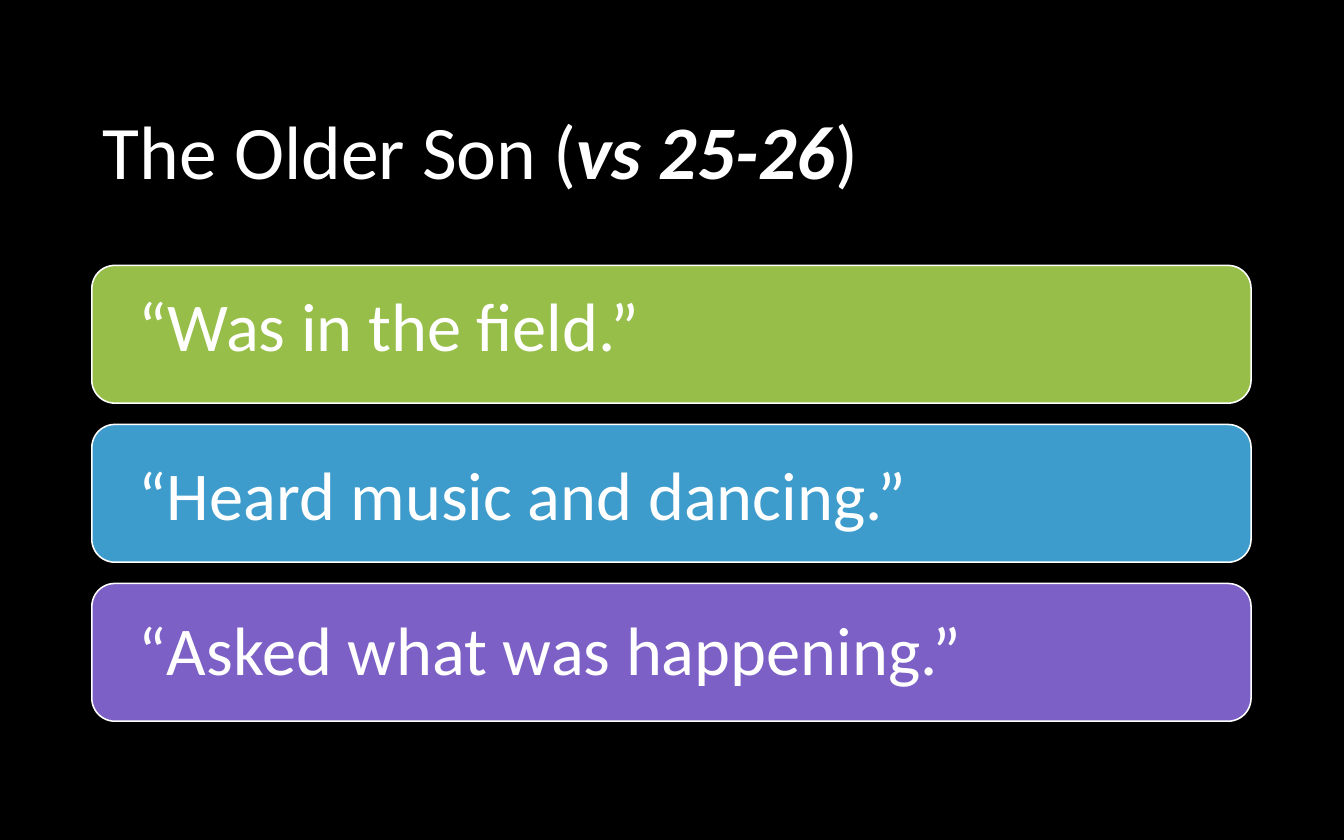
from pptx import Presentation
from pptx.dml.color import RGBColor
from pptx.enum.shapes import MSO_SHAPE
from pptx.enum.text import MSO_ANCHOR
from pptx.util import Inches, Pt

WHITE = "FFFFFF"
LEFT, WIDTH = 0.82, 10.35
BAR_TOP, BAR_HEIGHT, BAR_PITCH = 2.37, 1.23, 1.42
TEXT_LEFT, TEXT_HEIGHT = 1.14, 0.84


def rgb(value):
    return RGBColor.from_string(value)


def add_text(box, parts, anchor):
    """Add a text box at box (inches) with (text, size, emphasised) runs."""
    tf = slide.shapes.add_textbox(*map(Inches, box)).text_frame
    tf.word_wrap = True
    tf.vertical_anchor = anchor
    p = tf.paragraphs[0]
    for text, size, emphasised in parts:
        r = p.add_run()
        r.text = text
        r.font.name = "Calibri"
        r.font.size = Pt(size)
        r.font.bold = r.font.italic = emphasised
        r.font.color.rgb = rgb(WHITE)
    return p


prs = Presentation()
prs.slide_width, prs.slide_height = Inches(12), Inches(7.5)
slide = prs.slides.add_slide(prs.slide_layouts[6])
slide.background.fill.solid()
slide.background.fill.fore_color.rgb = rgb("000000")

# Title
title = add_text(
    (LEFT, 0.73, WIDTH, 1.3),
    [("The Older Son (", 48.6, False), ("vs 25-26", 48.6, True), (")", 48.6, False)],
    MSO_ANCHOR.MIDDLE,
)
title.line_spacing = 0.9

# Coloured bars
for row, color in enumerate(("97BE49", "3D9CCC", "7C60C6")):
    bar = slide.shapes.add_shape(
        MSO_SHAPE.ROUNDED_RECTANGLE, Inches(LEFT), Inches(BAR_TOP + row * BAR_PITCH),
        Inches(WIDTH), Inches(BAR_HEIGHT))
    bar.shadow.inherit = False
    bar.fill.solid()
    bar.fill.fore_color.rgb = rgb(color)
    bar.line.color.rgb = rgb(WHITE)
    bar.line.width = Pt(1)

# Quotations on the bars
quotes = [
    (2.48, 9.72, 44, "Was in the field.”"),
    (3.99, 9.41, 43.2, "Heard music and dancing.”"),
    (5.37, 9.88, 43.2, "Asked what was happening.”"),
]
for top, width, mark_size, quote in quotes:
    add_text((TEXT_LEFT, top, width, TEXT_HEIGHT),
             [("“", mark_size, False), (quote, 44, False)], MSO_ANCHOR.TOP)

prs.save("out.pptx")
